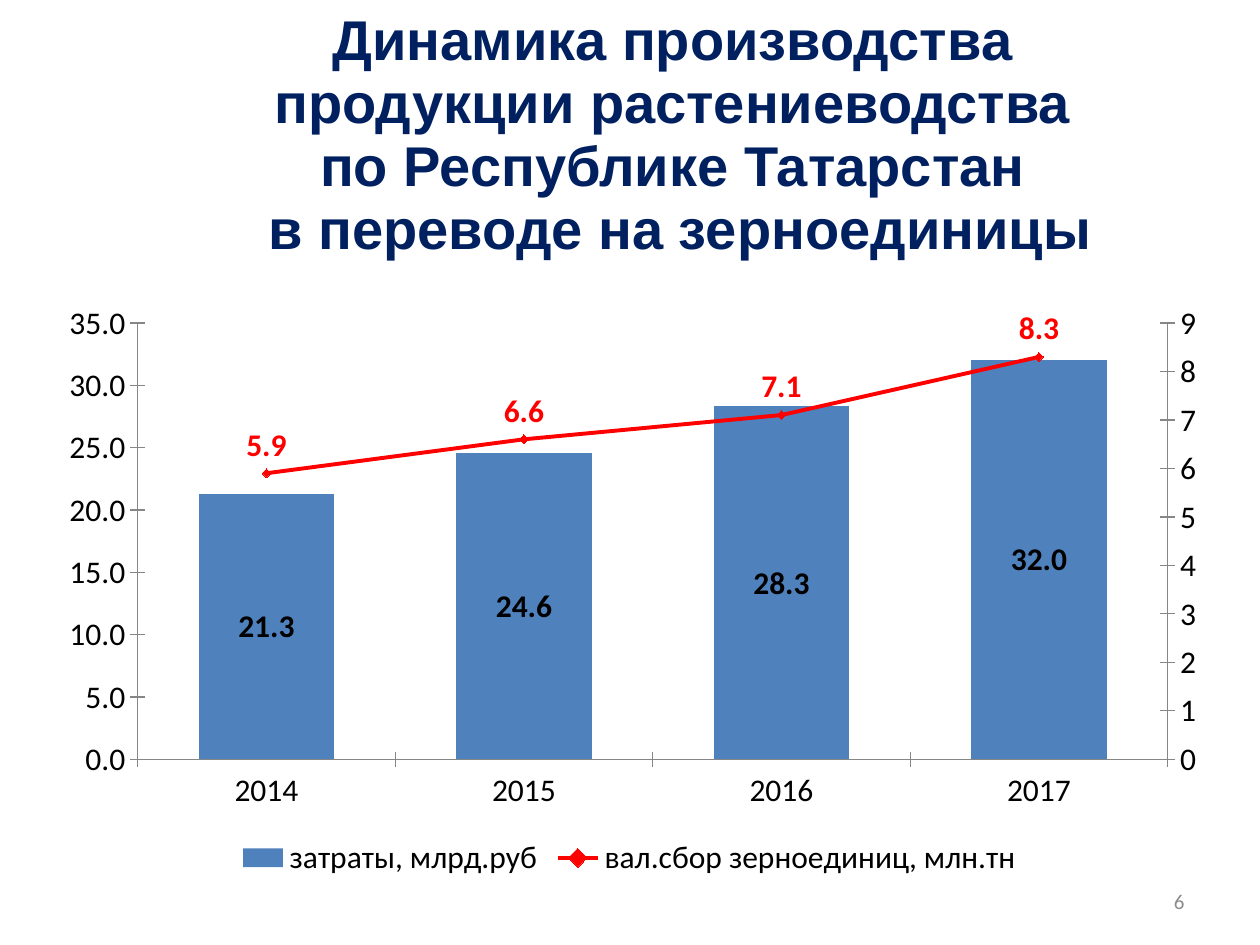
import pptx
import pptx.chart.data
import pptx.dml.color
import pptx.enum.chart
import pptx.enum.text
import pptx.oxml
import pptx.util
from pptx.util import Inches

COLORS = {
    "title": "002060",
    "number": "8C8C8C",
    "text": "000000",
    "costs": "4F81BD",
    "harvest": "FF0000",
    "axis": "868686",
}
TITLE_LINES = [
    "Динамика производства ",
    "продукции растениеводства ",
    "по Республике Татарстан ",
    "в переводе на зерноединицы",
]
YEARS = ["2014", "2015", "2016", "2017"]
COSTS = [21.3, 24.6, 28.3, 32.0]
HARVEST = [5.9, 6.6, 7.1, 8.3]

CHART_NS = 'xmlns:c="http://schemas.openxmlformats.org/drawingml/2006/chart"'
LINE_PLOT = f"""<c:lineChart {CHART_NS}><c:grouping val="standard"/><c:varyColors val="0"/>
<c:marker val="1"/><c:axId val="5001"/><c:axId val="5002"/></c:lineChart>"""
RIGHT_AXIS = f"""<c:valAx {CHART_NS}><c:axId val="5002"/>
<c:scaling><c:orientation val="minMax"/><c:max val="9"/><c:min val="0"/></c:scaling>
<c:delete val="0"/><c:axPos val="r"/><c:numFmt formatCode="General" sourceLinked="0"/>
<c:majorTickMark val="cross"/><c:minorTickMark val="none"/><c:tickLblPos val="nextTo"/>
<c:crossAx val="5001"/><c:crosses val="max"/><c:majorUnit val="1"/></c:valAx>"""
HIDDEN_AXIS = f"""<c:catAx {CHART_NS}><c:axId val="5001"/>
<c:scaling><c:orientation val="minMax"/></c:scaling><c:delete val="1"/><c:axPos val="b"/>
<c:majorTickMark val="none"/><c:minorTickMark val="none"/><c:tickLblPos val="nextTo"/>
<c:crossAx val="5002"/><c:crosses val="autoZero"/></c:catAx>"""
PLOT_LAYOUT = f"""<c:layout {CHART_NS}><c:manualLayout><c:layoutTarget val="inner"/>
<c:xMode val="edge"/><c:yMode val="edge"/><c:x val="0.08"/><c:y val="0.05"/>
<c:w val="0.88"/><c:h val="0.74"/></c:manualLayout></c:layout>"""


def color(name):
    return pptx.dml.color.RGBColor.from_string(COLORS[name])


def style_font(font, size, color_name, family, bold=False):
    font.size = pptx.util.Pt(size)
    font.name = family
    font.bold = bold
    font.color.rgb = color(color_name)


def add_title(slide):
    title = slide.shapes.title
    title.left, title.top = Inches(0.89), Inches(0.02)
    title.width, title.height = Inches(9.02), Inches(2.12)
    frame = title.text_frame
    frame.text = "\n".join(TITLE_LINES)
    frame.word_wrap = True
    frame.auto_size = pptx.enum.text.MSO_AUTO_SIZE.NONE
    frame.vertical_anchor = pptx.enum.text.MSO_ANCHOR.TOP
    for para in frame.paragraphs:
        para.alignment = pptx.enum.text.PP_ALIGN.CENTER
        para.line_spacing = pptx.util.Pt(36)
        para.space_before = pptx.util.Pt(0)
        for span in para.runs:
            style_font(span.font, 32, "title", "Arial", True)


def add_slide_number(slide):
    box = slide.shapes.add_textbox(Inches(7.17), Inches(6.95), Inches(2.33), Inches(0.4))
    frame = box.text_frame
    frame.word_wrap = True
    frame.vertical_anchor = pptx.enum.text.MSO_ANCHOR.MIDDLE
    frame.text = "6"
    para = frame.paragraphs[0]
    para.alignment = pptx.enum.text.PP_ALIGN.RIGHT
    style_font(para.runs[0].font, 12, "number", "Calibri")


def move_harvest_to_right_axis(chart):
    columns = chart.plots[0]
    harvest = columns.series[1]._element
    for child in harvest.xpath("c:invertIfNegative"):
        harvest.remove(child)
    line_plot = pptx.oxml.parse_xml(LINE_PLOT)
    line_plot.insert(2, harvest)
    columns._element.addnext(line_plot)
    plot_area = columns._element.getparent()
    last_axis = plot_area.xpath("c:valAx")[-1]
    right_axis = pptx.oxml.parse_xml(RIGHT_AXIS)
    last_axis.addnext(right_axis)
    right_axis.addnext(pptx.oxml.parse_xml(HIDDEN_AXIS))
    for layout in plot_area.xpath("c:layout"):
        plot_area.remove(layout)
    plot_area.insert(0, pptx.oxml.parse_xml(PLOT_LAYOUT))
    return pptx.chart.axis.ValueAxis(right_axis)


def style_axis(axis):
    axis.has_major_gridlines = False
    axis.major_tick_mark = pptx.enum.chart.XL_TICK_MARK.CROSS
    axis.format.line.color.rgb = color("axis")
    axis.format.line.width = pptx.util.Pt(0.75)


def label_series(series, position, color_name, number_format):
    labels = series.data_labels
    labels.show_value = True
    labels.number_format = number_format
    labels.number_format_is_linked = False
    labels.position = position
    style_font(labels.font, 18, color_name, "Calibri", True)


def style_columns(plot):
    plot.gap_width = 90
    plot.overlap = 100
    plot.vary_by_categories = False
    costs = plot.series[0]
    costs.format.fill.solid()
    costs.format.fill.fore_color.rgb = color("costs")
    label_series(costs, pptx.enum.chart.XL_LABEL_POSITION.CENTER, "text", "0.0")


def style_line(plot):
    harvest = plot.series[0]
    harvest.smooth = False
    harvest.format.line.color.rgb = color("harvest")
    harvest.format.line.width = pptx.util.Pt(2.25)
    marker = harvest.marker
    marker.style = pptx.enum.chart.XL_MARKER_STYLE.DIAMOND
    marker.size = 5
    marker.format.fill.solid()
    marker.format.fill.fore_color.rgb = color("harvest")
    marker.format.line.color.rgb = color("harvest")
    label_series(harvest, pptx.enum.chart.XL_LABEL_POSITION.ABOVE, "harvest", "General")


def add_production_chart(slide):
    data = pptx.chart.data.CategoryChartData()
    data.categories = YEARS
    data.add_series("затраты, млрд.руб", COSTS, "0.0")
    data.add_series("вал.сбор зерноединиц, млн.тн", HARVEST)
    chart = slide.shapes.add_chart(
        pptx.enum.chart.XL_CHART_TYPE.COLUMN_STACKED,
        Inches(0.35), Inches(2.33), Inches(9.29), Inches(4.68), data,
    ).chart
    chart.has_title = False
    style_font(chart.font, 18, "text", "Calibri")
    chart.has_legend = True
    chart.legend.position = pptx.enum.chart.XL_LEGEND_POSITION.BOTTOM
    chart.legend.include_in_layout = False
    left_axis = chart.value_axis
    left_axis.minimum_scale, left_axis.maximum_scale = 0, 35
    left_axis.major_unit = 5
    left_axis.tick_labels.number_format = "0.0"
    left_axis.tick_labels.number_format_is_linked = False
    right_axis = move_harvest_to_right_axis(chart)
    for axis in (chart.category_axis, left_axis, right_axis):
        style_axis(axis)
    columns, line = chart.plots
    style_columns(columns)
    style_line(line)


def main():
    deck = pptx.Presentation()
    deck.slide_width, deck.slide_height = Inches(10), Inches(7.5)
    slide = deck.slides.add_slide(deck.slide_layouts[5])
    add_slide_number(slide)
    add_title(slide)
    add_production_chart(slide)
    deck.save("out.pptx")


if __name__ == "__main__":
    main()
